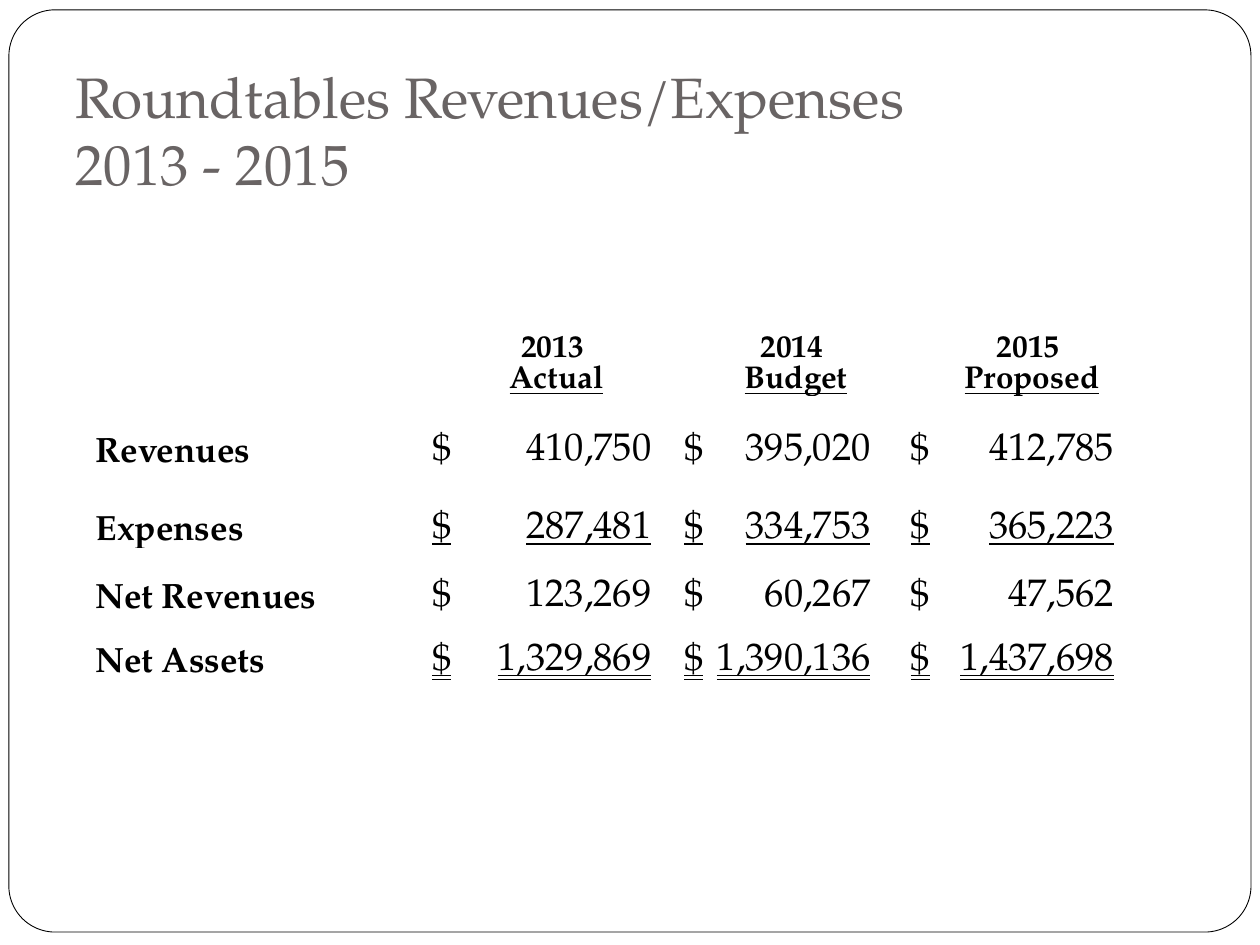
from dataclasses import dataclass

from lxml import etree
from pptx import Presentation
from pptx.dml.color import RGBColor
from pptx.enum.shapes import MSO_SHAPE
from pptx.enum.text import MSO_ANCHOR, MSO_AUTO_SIZE, MSO_UNDERLINE, PP_ALIGN
from pptx.oxml.ns import qn
from pptx.util import Cm, Pt

ROUNDED = MSO_SHAPE.ROUNDED_RECTANGLE
BOTTOM = MSO_ANCHOR.BOTTOM
LEFT, CENTER = PP_ALIGN.LEFT, PP_ALIGN.CENTER
NONE = MSO_UNDERLINE.NONE
SINGLE = MSO_UNDERLINE.SINGLE_LINE
DOUBLE = MSO_UNDERLINE.DOUBLE_LINE


@dataclass
class Theme:
    font: str = "TeX Gyre Pagella"
    paper: RGBColor = RGBColor(0xFF, 0xFF, 0xFF)
    ink: RGBColor = RGBColor(0, 0, 0)
    title_ink: RGBColor = RGBColor(0x69, 0x64, 0x64)
    title_size: float = 32.4
    heading_size: float = 18
    label_size: float = 20
    amount_size: float = 22


theme = Theme()


def add_run(paragraph, text, size, color=theme.ink, bold=False, underline=NONE):
    run = paragraph.add_run()
    run.text = text
    run.font.name = theme.font
    run.font.size = Pt(size)
    run.font.color.rgb = color
    run.font.bold = bold
    run.font.underline = underline


def add_right_tab(paragraph, position):
    tabs = etree.SubElement(paragraph._p.get_or_add_pPr(), qn("a:tabLst"))
    etree.SubElement(tabs, qn("a:tab"), pos=str(position), algn="r")


prs = Presentation()
prs.slide_width, prs.slide_height = Cm(25.4), Cm(19.05)
slide = prs.slides.add_slide(prs.slide_layouts[5])

# Rounded page frame, behind everything
frame = slide.shapes.add_shape(ROUNDED, Cm(0.18), Cm(0.2), Cm(25.04), Cm(18.59))
frame.adjustments[0] = 0.05
frame.shadow.inherit = False
frame.fill.solid()
frame.fill.fore_color.rgb = theme.paper
frame.line.color.rgb = theme.ink
frame.line.width = Pt(0.5)
slide.shapes._spTree.insert(2, frame._element)

# Title
title = slide.shapes.title
title.left, title.top, title.width, title.height = Cm(1.27), Cm(1.57), Cm(19.6), Cm(2.65)
title_text = title.text_frame
title_text.auto_size = MSO_AUTO_SIZE.NONE
title_text.word_wrap = True
title_text.vertical_anchor = BOTTOM
title_text.margin_left = title_text.margin_right = title_text.margin_bottom = Cm(0.25)
title_text.margin_top = Cm(0.13)
title_line = title_text.paragraphs[0]
title_line.alignment = LEFT
title_line.line_spacing = Pt(38.3)
add_run(title_line, "Roundtables Revenues/Expenses", theme.title_size, theme.title_ink)
title_line.add_line_break()
add_run(title_line, "2013 - 2015", theme.title_size, theme.title_ink)

# Financial table
headings = [("2013", "Actual"), ("2014", "Budget"), ("2015", "Proposed")]
accounts = [
    ("Revenues", ["410,750", "395,020", "412,785"], NONE),
    ("Expenses", ["287,481", "334,753", "365,223"], SINGLE),
    ("Net Revenues", ["123,269", "60,267", "47,562"], NONE),
    ("Net Assets", ["1,329,869", "1,390,136", "1,437,698"], DOUBLE),
]
column_widths = [Cm(6.78), Cm(5.08), Cm(4.57), Cm(4.95)]
row_heights = [Cm(1.5), Cm(1.5), Cm(1.57), Cm(1.37), Cm(1.3)]
amount_edges = [Cm(4.42), Cm(3.76), Cm(4.1)]

finances = slide.shapes.add_table(
    len(row_heights), len(column_widths), Cm(1.9), Cm(6.5),
    sum(column_widths), sum(row_heights)).table
finances.first_row = finances.horz_banding = False
for column, width in zip(finances.columns, column_widths):
    column.width = width
for row, height in zip(finances.rows, row_heights):
    row.height = height
for cell in finances.iter_cells():
    cell.fill.background()
    cell.vertical_anchor = BOTTOM
    cell.margin_left = cell.margin_right = cell.margin_top = Cm(0.03)
    cell.margin_bottom = 0

# Column headings
for column, (year, status) in enumerate(headings, start=1):
    heading = finances.cell(0, column).text_frame
    for line, text, underline in ((heading.paragraphs[0], year + " ", NONE),
                                  (heading.add_paragraph(), status, SINGLE)):
        line.alignment = CENTER
        line.line_spacing = Pt(17.7)
        add_run(line, text, theme.heading_size, bold=True, underline=underline)

# Accounts: dollar sign at the left, amount on a right tab
for row, (account, amounts, underline) in enumerate(accounts, start=1):
    label = finances.cell(row, 0).text_frame.paragraphs[0]
    add_run(label, account, theme.label_size, bold=True)
    for column, (amount, edge) in enumerate(zip(amounts, amount_edges), start=1):
        entry = finances.cell(row, column).text_frame.paragraphs[0]
        add_right_tab(entry, edge)
        add_run(entry, "$\t" + amount, theme.amount_size, underline=underline)

prs.save("out.pptx")
